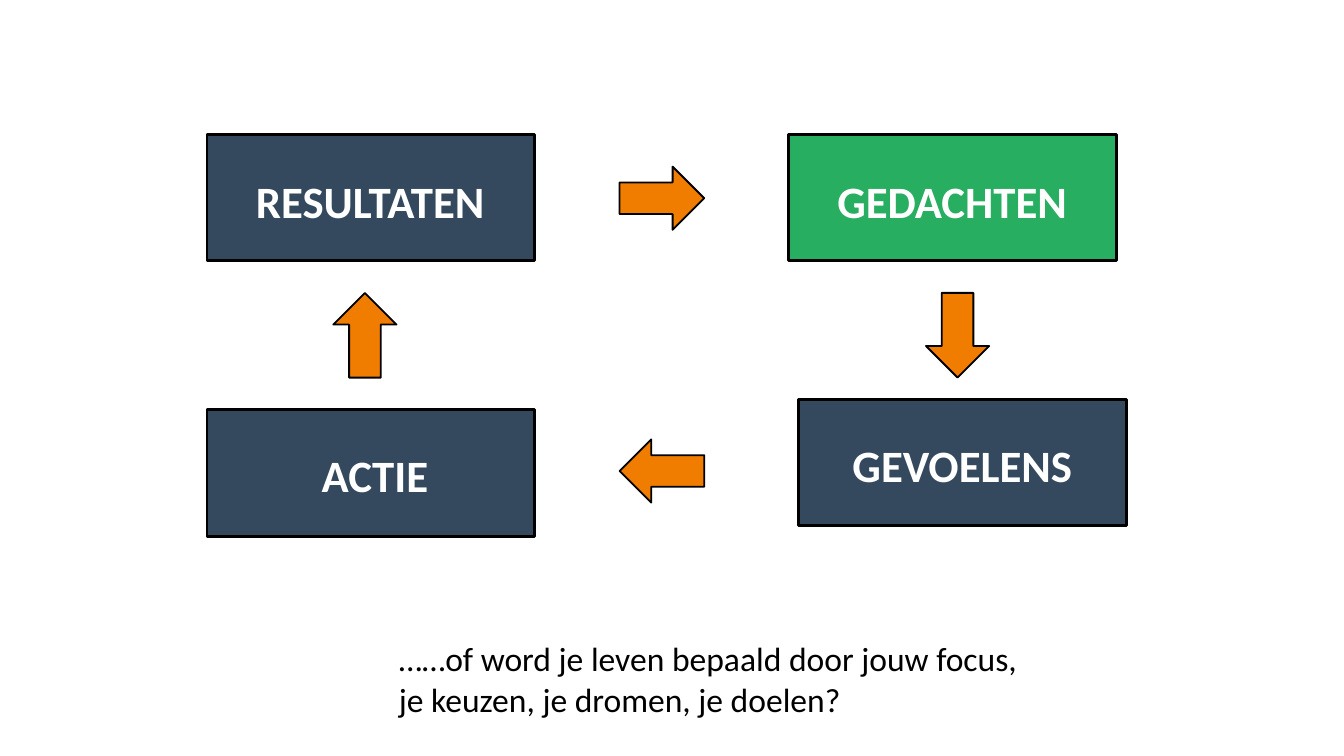
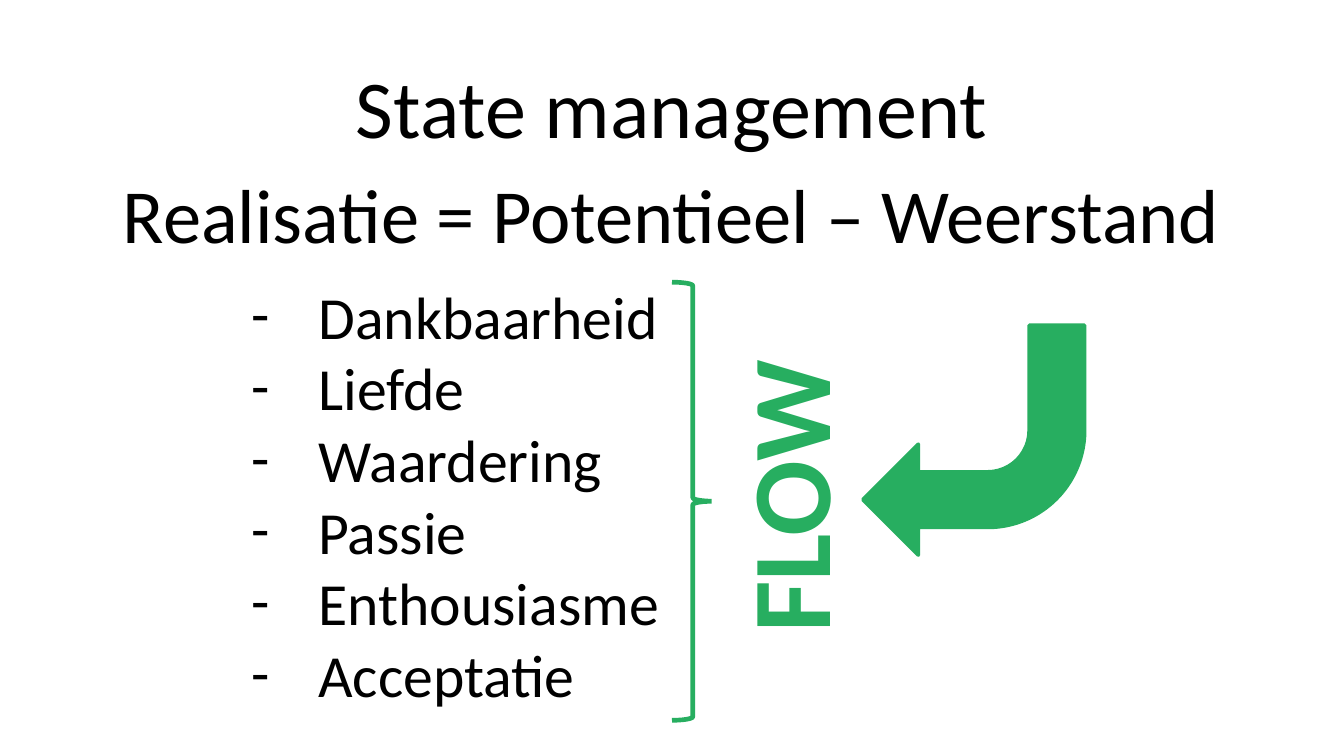
from dataclasses import dataclass
from typing import Optional

import lxml.etree
import pptx
import pptx.dml.color
import pptx.enum.shapes
import pptx.enum.text
import pptx.oxml.ns
import pptx.shapes.autoshape
import pptx.slide
import pptx.text.text
import pptx.util
from pptx.util import Inches

Shape = pptx.enum.shapes.MSO_SHAPE
Align = pptx.enum.text.PP_ALIGN


@dataclass(frozen=True)
class Theme:
    font: str = "Calibri"
    white: str = "FFFFFF"
    black: str = "000000"
    navy: str = "34495E"
    green: str = "27AE60"
    orange: str = "F07D00"
    title: int = 44
    formula: int = 41
    bullet: int = 32
    label: int = 24
    closing: int = 18
    flow: int = 60


THEME = Theme()


@dataclass(frozen=True)
class Area:
    left: float
    top: float
    width: float
    height: float

    def lengths(self) -> tuple:
        return tuple(Inches(value) for value in (self.left, self.top, self.width, self.height))


@dataclass(frozen=True)
class Style:
    size: int
    color: str = THEME.black
    bold: bool = False
    align: Optional[Align] = None
    bullet: str = ""
    side_inset: float = 0.1
    end_inset: float = 0.05


@dataclass(frozen=True)
class Figure:
    kind: Shape
    area: Area
    fill: Optional[str]
    line: Optional[str] = THEME.black
    weight: float = 1.5
    rotation: int = 0


@dataclass(frozen=True)
class Caption:
    area: Area
    lines: tuple[str, ...]
    style: Style


LABEL = Style(THEME.label, THEME.white, True, Align.CENTER)
STEP_WIDTH, STEP_HEIGHT = 2.44, 0.94
ARROW_WIDTH, ARROW_HEIGHT = 0.47, 0.63

STEPS = (
    (5.94, 2.97, THEME.navy),
    (1.54, 1, THEME.navy),
    (1.54, 3.05, THEME.navy),
    (5.87, 1, THEME.green),
)
LABELS = (
    ("GEVOELENS", Area(6.02, 3.21, 2.28, 0.5)),
    ("GEDACHTEN", Area(6.1, 1.24, 1.97, 0.5)),
    ("RESULTATEN", Area(1.77, 1.24, 1.97, 0.5)),
    ("ACTIE", Area(1.69, 3.28, 2.2, 0.5)),
)
ARROWS = ((6.89, 2.18, 0), (4.69, 1.16, 270), (2.48, 2.18, 180), (4.69, 3.19, 90))
CLOSING = Caption(
    Area(2.87, 4.7, 4.8, 0.71),
    ("……of word je leven bepaald door jouw focus, je keuzen, je dromen, je doelen?",),
    Style(THEME.closing),
)

STATE_CAPTIONS = (
    Caption(Area(1.22, 0.37, 7.56, 1.65), ("State management",),
            Style(THEME.title, align=Align.CENTER)),
    Caption(Area(0, 1.2, 10, 0.77), ("Realisatie = Potentieel – Weerstand",),
            Style(THEME.formula, align=Align.CENTER, side_inset=0.07, end_inset=0.04)),
    Caption(Area(1.77, 2.03, 5.12, 3.33),
            ("Dankbaarheid", "Liefde", "Waardering", "Passie", "Enthousiasme", "Acceptatie"),
            Style(THEME.bullet, bullet="-")),
)
STATE_FIGURES = (
    Figure(Shape.BENT_ARROW, Area(6.42, 2.42, 1.65, 1.71), THEME.green, THEME.green, 2, 180),
    Figure(Shape.RIGHT_BRACE, Area(5, 2.1, 0.31, 3.26), None, THEME.green, 2.5),
)
FLOW = Figure(Shape.RECTANGLE, Area(4.55, 3.14, 2.6, 1.11), THEME.white, None, rotation=270)


def rgb(color: str) -> pptx.dml.color.RGBColor:
    return pptx.dml.color.RGBColor.from_string(color)


def add_bullet(para, mark: str) -> None:
    properties = para._p.get_or_add_pPr()
    indent = Inches(0.5)
    properties.set("marL", str(indent))
    properties.set("indent", str(-indent))
    for tag, name, value in (("a:buFont", "typeface", THEME.font), ("a:buChar", "char", mark)):
        lxml.etree.SubElement(properties, pptx.oxml.ns.qn(tag)).set(name, value)


def write(frame: pptx.text.text.TextFrame, lines: tuple[str, ...], style: Style) -> None:
    frame.word_wrap = True
    frame.auto_size = pptx.enum.text.MSO_AUTO_SIZE.SHAPE_TO_FIT_TEXT
    frame.vertical_anchor = pptx.enum.text.MSO_ANCHOR.TOP
    frame.margin_left = frame.margin_right = Inches(style.side_inset)
    frame.margin_top = frame.margin_bottom = Inches(style.end_inset)
    for index, line in enumerate(lines):
        para = frame.add_paragraph() if index else frame.paragraphs[0]
        para.alignment = style.align
        if style.bullet:
            add_bullet(para, style.bullet)
        span = para.add_run()
        span.text = line
        span.font.name = THEME.font
        span.font.size = pptx.util.Pt(style.size)
        span.font.bold = style.bold
        span.font.color.rgb = rgb(style.color)


def draw_caption(page: pptx.slide.Slide, caption: Caption) -> None:
    box = page.shapes.add_textbox(*caption.area.lengths())
    write(box.text_frame, caption.lines, caption.style)


def draw_figure(page: pptx.slide.Slide, figure: Figure) -> pptx.shapes.autoshape.Shape:
    shape = page.shapes.add_shape(figure.kind, *figure.area.lengths())
    shape.shadow.inherit = False
    shape.rotation = figure.rotation
    if figure.fill:
        shape.fill.solid()
        shape.fill.fore_color.rgb = rgb(figure.fill)
    else:
        shape.fill.background()
    if figure.line:
        shape.line.color.rgb = rgb(figure.line)
        shape.line.width = pptx.util.Pt(figure.weight)
    else:
        shape.line.fill.background()
    return shape


def draw_cycle(page: pptx.slide.Slide) -> None:
    for left, top, color in STEPS:
        draw_figure(page, Figure(Shape.RECTANGLE, Area(left, top, STEP_WIDTH, STEP_HEIGHT), color))
    for label, area in LABELS:
        draw_caption(page, Caption(area, (label,), LABEL))
    for left, top, rotation in ARROWS:
        area = Area(left, top, ARROW_WIDTH, ARROW_HEIGHT)
        draw_figure(page, Figure(Shape.DOWN_ARROW, area, THEME.orange, weight=1, rotation=rotation))
    draw_caption(page, CLOSING)


def draw_state(page: pptx.slide.Slide) -> None:
    for caption in STATE_CAPTIONS:
        draw_caption(page, caption)
    for figure in STATE_FIGURES:
        draw_figure(page, figure)
    flow = draw_figure(page, FLOW)
    write(flow.text_frame, ("FLOW",), Style(THEME.flow, THEME.green, True, Align.CENTER))


def main() -> None:
    deck = pptx.Presentation()
    deck.slide_width = Inches(10)
    deck.slide_height = deck.slide_width * 9 // 16
    for draw in (draw_cycle, draw_state):
        page = deck.slides.add_slide(deck.slide_layouts[6])
        page.background.fill.solid()
        page.background.fill.fore_color.rgb = rgb(THEME.white)
        draw(page)
    deck.save("out.pptx")


if __name__ == "__main__":
    main()
